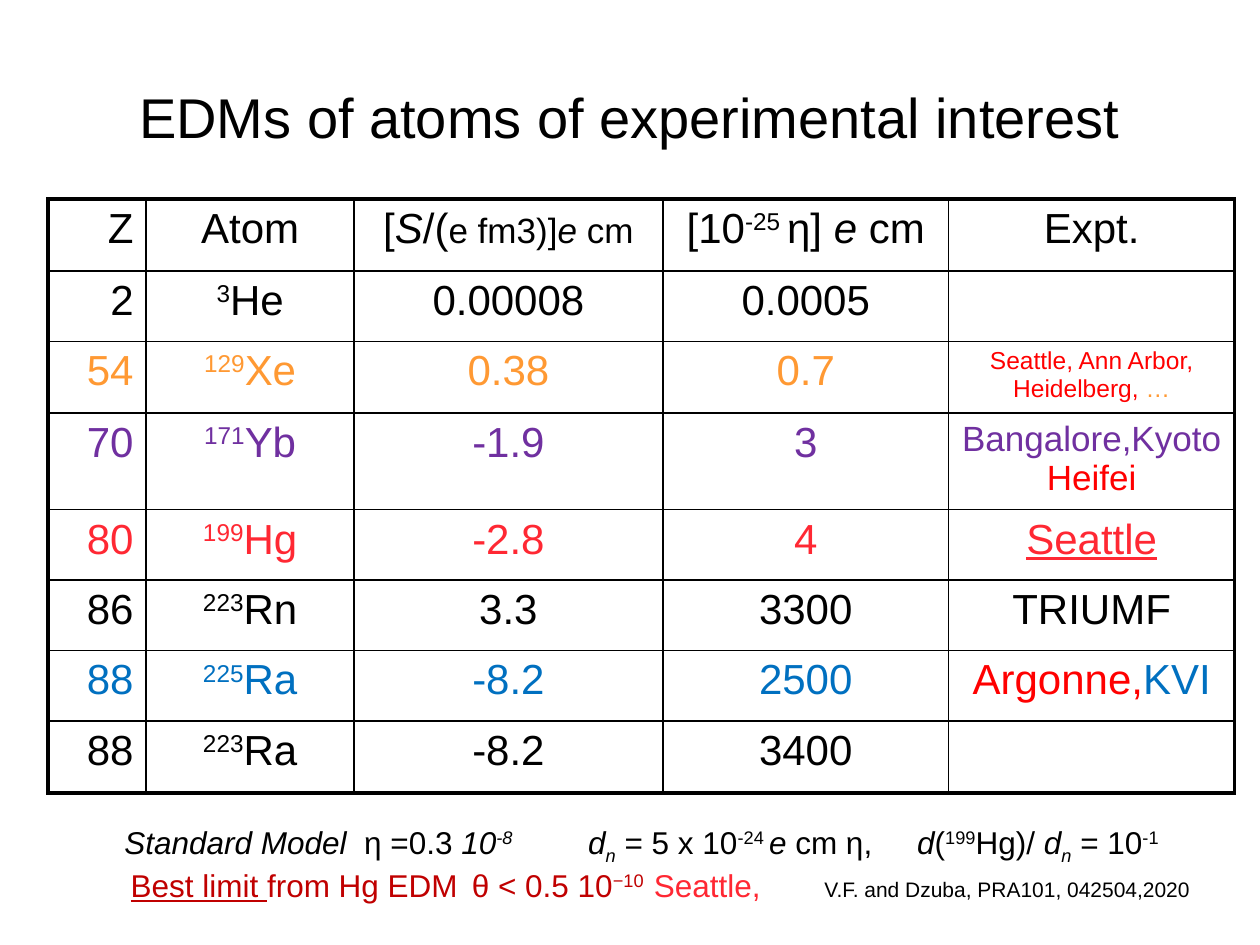
from lxml.etree import SubElement
from pptx import Presentation
from pptx.dml.color import RGBColor
from pptx.enum.text import MSO_ANCHOR as Anchor, PP_ALIGN as Align
from pptx.oxml.ns import qn
from pptx.util import Pt

BLACK = RGBColor(0x00, 0x00, 0x00)
ORANGE = RGBColor(0xFF, 0x99, 0x33)
PURPLE = RGBColor(0x70, 0x30, 0xA0)
ROSE = RGBColor(0xFF, 0x28, 0x33)
RED = RGBColor(0xFF, 0x00, 0x00)
BLUE = RGBColor(0x00, 0x70, 0xC0)
DARK_RED = RGBColor(0xC0, 0x00, 0x00)

# Run formats
ITALIC = {"italic": True}
UNDERLINE = {"underline": True}
SUPER = {"baseline": 30}
SUB = {"baseline": -25, "italic": True}
SMALL = {"size": 20}
PLACES = {"size": 14, "color": RED}

# Content: a run is a string or a (string, format) pair
TITLE = "EDMs of atoms of experimental interest"
HEADER = [
    ["Z"],
    ["Atom"],
    ["[", ("S", ITALIC), "/(", ("e fm3)]", SMALL),
     ("e", {**SMALL, **ITALIC}), (" cm", SMALL)],
    ["[10", ("-25 ", SUPER), "η] ", ("e", ITALIC), " cm"],
    ["Expt."],
]
# Z, mass number, symbol, Schiff moment EDM, eta EDM, experiments, row colour
ATOMS = [
    ("2", "3", "He", "0.00008", "0.0005", [], BLACK),
    ("54", "129", "Xe", "0.38", "0.7",
     [("Seattle, Ann Arbor, Heidelberg, ", PLACES), ("…", {"size": 14})], ORANGE),
    ("70", "171", "Yb", "-1.9", "3",
     [("Bangalore,Kyoto", SMALL), "\n", ("Heifei", {**SMALL, "color": RED})], PURPLE),
    ("80", "199", "Hg", "-2.8", "4", [("Seattle", UNDERLINE)], ROSE),
    ("86", "223", "Rn", "3.3", "3300", ["TRIUMF"], BLACK),
    ("88", "225", "Ra", "-8.2", "2500",
     [("Argonne,", {"color": RED}), "KVI"], BLUE),
    ("88", "223", "Ra", "-8.2", "3400", [], BLACK),
]
# Footer lines: tab stops, colour, runs
FOOTER = [
    ((5, 142, 270, 458), BLACK, [
        ("\tStandard Model\t", ITALIC), "η =0.3 ", ("10", ITALIC),
        ("-8", {**SUPER, **ITALIC}), ("\td", ITALIC), ("n", SUB), " = 5 x 10",
        ("-24 ", SUPER), ("e", ITALIC), " cm η,", ("\td", ITALIC), "(",
        ("199", SUPER), "Hg)/ ", ("d", ITALIC), ("n", SUB), " = 10", ("-1", SUPER)]),
    ((8.5, 203.5, 307.5, 405), DARK_RED, [
        "\t", ("Best limit ", UNDERLINE), "from Hg EDM\tθ < 0.5 10", ("−10", SUPER),
        ("\tSeattle,", {"color": ROSE}),
        ("\tV.F. and Dzuba, PRA101, 042504,2020", {"size": 12, "color": BLACK})]),
]

# Geometry
TABLE_LEFT, TABLE_TOP = 27.36, 113.76
COLUMN_WIDTHS = [56.2, 118.8, 176.4, 163.4, 163.4]
ROW_HEIGHTS = [41, 40.3, 41, 51.3, 40.3, 40.3, 40.3, 41]
THICK, THIN = 2.25, 1


def add_runs(paragraph, runs, size, color):
    for item in runs:
        if item == "\n":
            paragraph.add_line_break()
            continue
        text, extra = (item, {}) if isinstance(item, str) else item
        look = {"name": "Arial", "size": size, "color": color, **extra}
        run = paragraph.add_run()
        run.text = text
        run.font.color.rgb = look.pop("color")
        baseline = look.pop("baseline", None)
        if baseline:
            run._r.get_or_add_rPr().set("baseline", str(baseline * 1000))
        look["size"] = Pt(look["size"])
        for name, value in look.items():
            setattr(run.font, name, value)


def set_borders(cell, widths):
    properties = cell._tc.get_or_add_tcPr()
    for index, (side, width) in enumerate(widths.items()):
        line = properties.makeelement(qn("a:" + side), {"w": str(int(Pt(width)))})
        fill = SubElement(line, qn("a:solidFill"))
        SubElement(fill, qn("a:srgbClr"), val=str(BLACK))
        properties.insert(index, line)


def add_text_box(slide, left, top, width, height):
    box = slide.shapes.add_textbox(Pt(left), Pt(top), Pt(width), Pt(height))
    box.text_frame.word_wrap = True
    return box.text_frame


def add_title(slide):
    frame = add_text_box(slide, 54, 30.24, 612, 72)
    frame.vertical_anchor = Anchor.MIDDLE
    frame.paragraphs[0].alignment = Align.CENTER
    add_runs(frame.paragraphs[0], [TITLE], 32, BLACK)


def add_atom_table(slide):
    rows = [(HEADER, BLACK)]
    for z, mass, symbol, schiff, eta, experiments, color in ATOMS:
        rows.append(([[z], [(mass, SUPER), symbol], [schiff], [eta], experiments], color))
    last_row, last_column = len(rows) - 1, len(COLUMN_WIDTHS) - 1

    table = slide.shapes.add_table(
        len(rows), len(COLUMN_WIDTHS), Pt(TABLE_LEFT), Pt(TABLE_TOP),
        Pt(sum(COLUMN_WIDTHS)), Pt(sum(ROW_HEIGHTS))).table
    table.first_row = table.horz_banding = False
    for column, width in zip(table.columns, COLUMN_WIDTHS):
        column.width = Pt(width)
    for row, height in zip(table.rows, ROW_HEIGHTS):
        row.height = Pt(height)

    for r, (cells, color) in enumerate(rows):
        for c, runs in enumerate(cells):
            cell = table.cell(r, c)
            cell.fill.background()
            set_borders(cell, {
                "lnL": THICK if c == 0 else THIN,
                "lnR": THICK if c == last_column else THIN,
                "lnT": THICK if r == 0 else THIN,
                "lnB": THICK if r == last_row else THIN})
            paragraph = cell.text_frame.paragraphs[0]
            paragraph.alignment = Align.RIGHT if c == 0 else Align.CENTER
            add_runs(paragraph, runs, 24, color)


def add_footer(slide):
    frame = add_text_box(slide, 59.04, 466.56, 643.68, 60)
    for index, (stops, color, runs) in enumerate(FOOTER):
        paragraph = frame.add_paragraph() if index else frame.paragraphs[0]
        tabs = SubElement(paragraph._p.get_or_add_pPr(), qn("a:tabLst"))
        for stop in stops:
            SubElement(tabs, qn("a:tab"), pos=str(int(Pt(stop))), algn="l")
        add_runs(paragraph, runs, 18, color)


def main():
    presentation = Presentation()
    presentation.slide_width, presentation.slide_height = Pt(720), Pt(540)
    slide = presentation.slides.add_slide(presentation.slide_layouts[6])
    add_title(slide)
    add_atom_table(slide)
    add_footer(slide)
    presentation.save("out.pptx")


if __name__ == "__main__":
    main()
